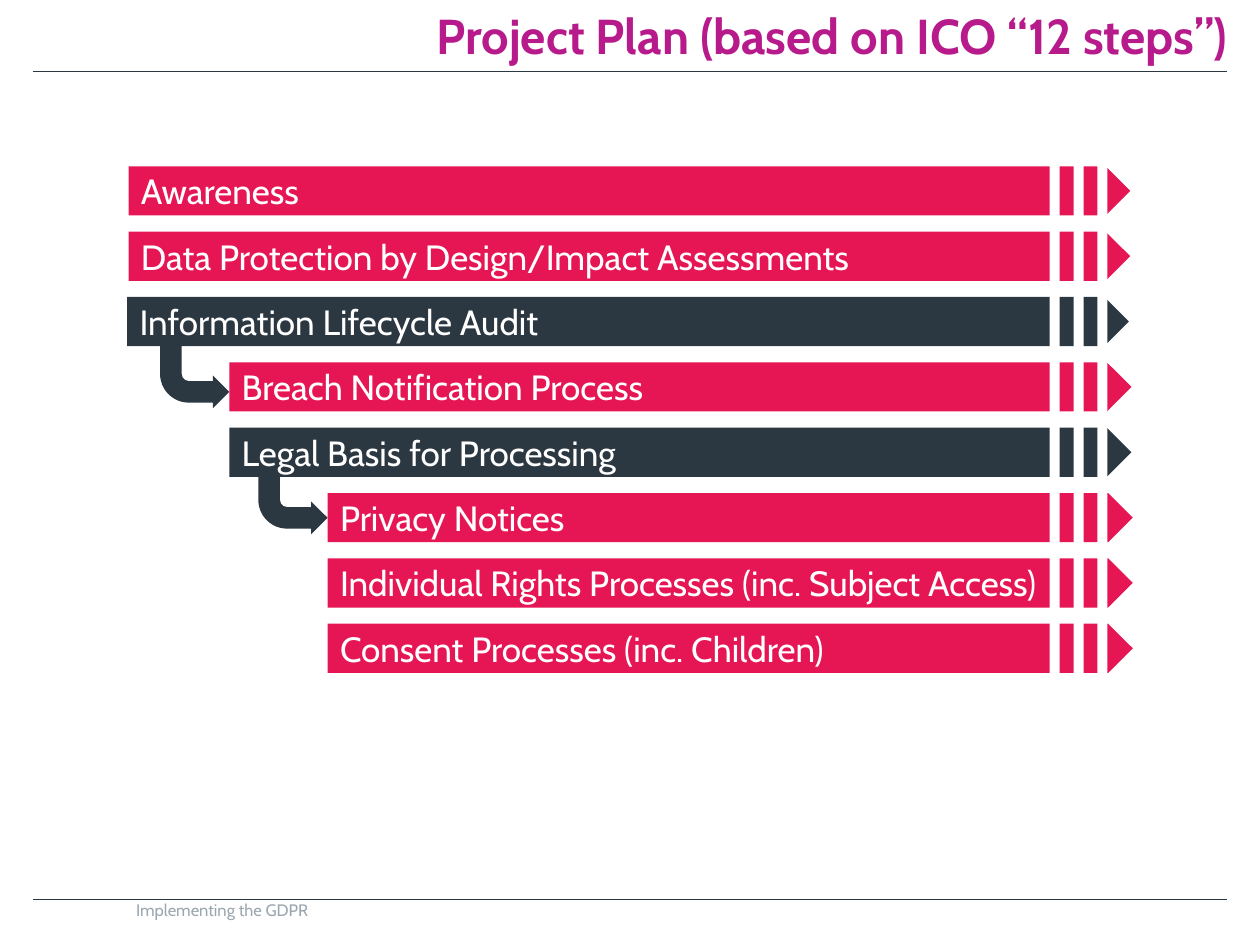
from lxml.etree import SubElement
from pptx import Presentation
from pptx.dml.color import RGBColor
from pptx.enum.shapes import MSO_CONNECTOR as Link, MSO_SHAPE as Kind
from pptx.enum.text import MSO_ANCHOR as Anchor, PP_ALIGN as Align
from pptx.oxml.ns import qn
from pptx.util import Inches, Pt

PINK = RGBColor(0xE6, 0x15, 0x54)
DARK = RGBColor(0x2C, 0x38, 0x41)
PLUM = RGBColor(0xB7, 0x1A, 0x8B)
GREY = RGBColor(0x9B, 0xA7, 0xB0)
WHITE = RGBColor(0xFF, 0xFF, 0xFF)

deck = Presentation()
deck.slide_width, deck.slide_height = Inches(10), Inches(7.5)
col = deck.slide_width / 100
row = deck.slide_height / 75
slide = deck.slides.add_slide(deck.slide_layouts[6])
shapes = slide.shapes


def write(shape, text, size, color, bold=False, align=Align.LEFT,
          anchor=Anchor.TOP, inset=True):
    frame = shape.text_frame
    frame.word_wrap = True
    frame.vertical_anchor = anchor
    if not inset:
        frame.margin_left = frame.margin_right = 0
        frame.margin_top = frame.margin_bottom = 0
    para = frame.paragraphs[0]
    para.alignment = align
    run = para.add_run()
    run.text = text
    font = run.font
    font.name, font.size, font.bold = "Cabin", Pt(size), bold
    font.color.rgb = color


def block(kind, left, top, width, height, color):
    shape = shapes.add_shape(kind, int(left * col), int(top * row),
                             int(width * col), int(height * row))
    shape.shadow.inherit = False
    shape.fill.solid()
    shape.fill.fore_color.rgb = color
    shape.line.fill.background()
    return shape


for y in (5.7, 71.4):
    rule = shapes.add_connector(Link.STRAIGHT, int(2.6 * col), int(y * row),
                                int(97.4 * col), int(y * row))
    rule.line.color.rgb = DARK
    rule.line.width = Pt(0.5)
    SubElement(rule._element.spPr, qn("a:effectLst"))

title = shapes.add_textbox(int(24.7 * col), 0, int(72.7 * col), int(5.1 * row))
write(title, "Project Plan (based on ICO “12 steps”)", 28, PLUM, bold=True,
      align=Align.RIGHT, anchor=Anchor.BOTTOM, inset=False)

foot = shapes.add_textbox(int(10.8 * col), int(71.4 * row),
                          int(78.2 * col), int(2.6 * row))
write(foot, "Implementing the GDPR", 9.5, GREY, inset=False)

for left, top in ((20.5, 37.2), (12.7, 27.2)):
    arrow = block(Kind.BENT_ARROW, left, top, 5.5, 5.2, DARK)
    arrow._element.spPr.xfrm.set("flipV", "1")
    for i, value in enumerate((0.33, 0.25, 0.25, 0.44)):
        arrow.adjustments[i] = value

steps = (
    ("Awareness", 10.2, 89.7, PINK),
    ("Data Protection by Design/Impact Assessments", 10.2, 89.7, PINK),
    ("Information Lifecycle Audit", 10.1, 89.6, DARK),
    ("Breach Notification Process", 18.2, 89.8, PINK),
    ("Legal Basis for Processing", 18.2, 89.8, DARK),
    ("Privacy Notices", 26, 89.9, PINK),
    ("Individual Rights Processes (inc. Subject Access)", 26, 89.9, PINK),
    ("Consent Processes (inc. Children)", 26, 89.9, PINK),
)
pitch = (49.5 - 13.2) / (len(steps) - 1)
for i, (text, left, tip, color) in enumerate(steps):
    bar = block(Kind.PENTAGON, left, 13.2 + i * pitch, tip - left, 3.9, color)
    write(bar, text, 20, WHITE, anchor=Anchor.MIDDLE)

for i in range(3):
    block(Kind.RECTANGLE, 83.3 + i * 1.9, 12, 0.8, 43, WHITE)

deck.save("out.pptx")
